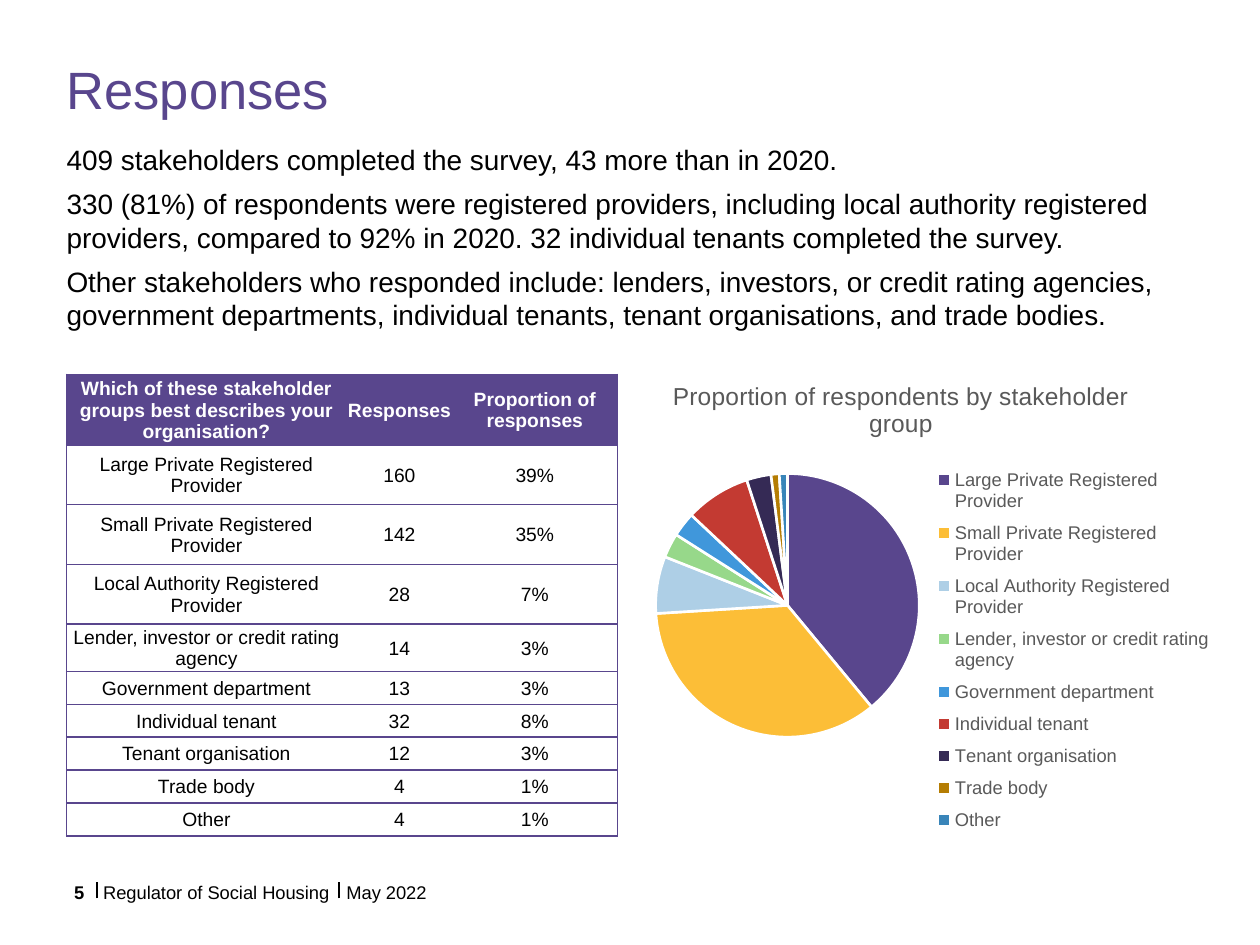
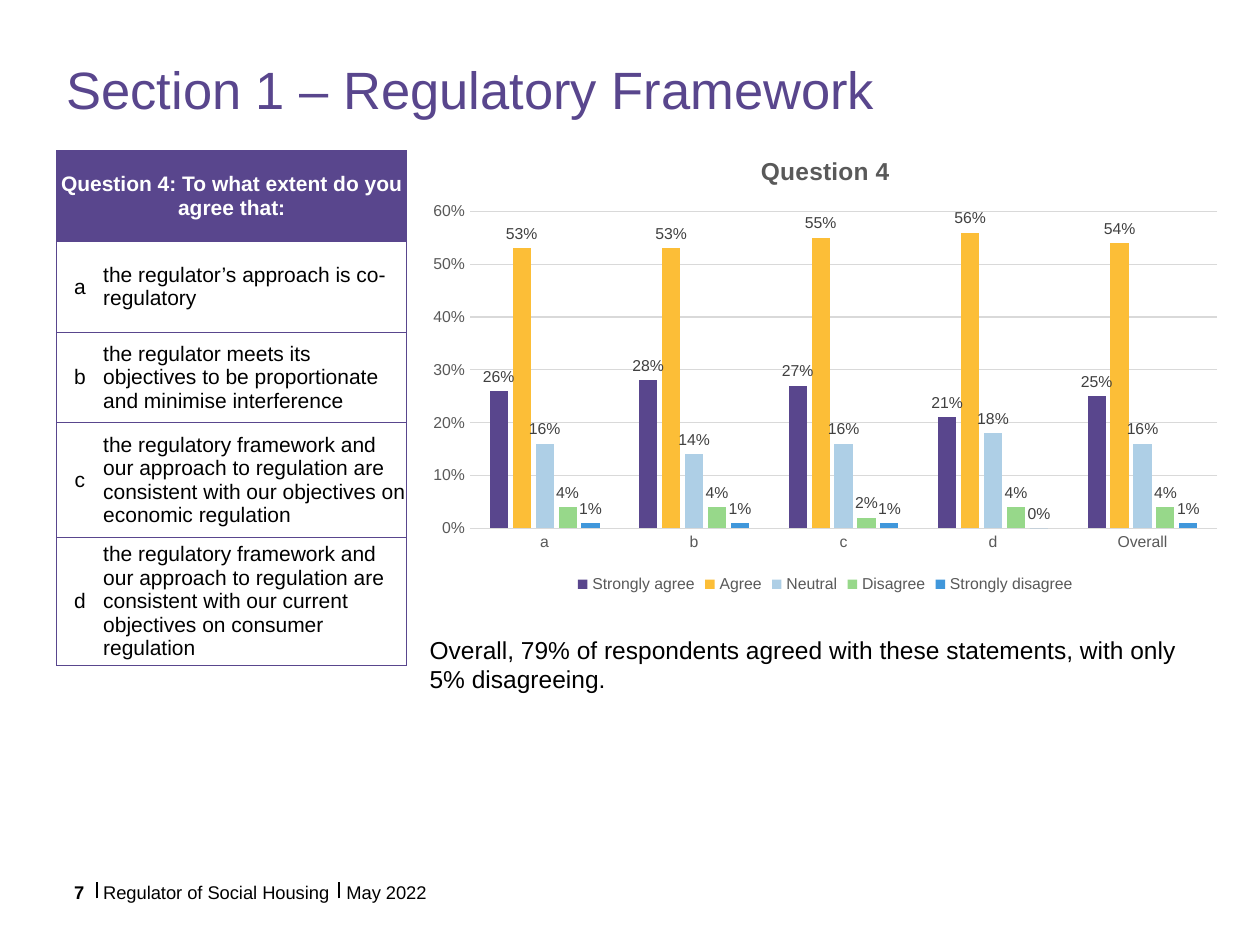
from dataclasses import dataclass

from lxml import etree
from pptx import Presentation
from pptx.chart.data import CategoryChartData
from pptx.dml.color import RGBColor
from pptx.enum import chart as ch, shapes, text
from pptx.oxml import ns
from pptx.util import Pt

LEFT, CENTER = text.PP_ALIGN.LEFT, text.PP_ALIGN.CENTER


@dataclass(frozen=True)
class Theme:
    font: str = "Arial"
    purple: str = "59468D"
    black: str = "000000"
    white: str = "FFFFFF"
    chart_text: str = "595959"
    label_text: str = "404040"
    grid: str = "D9D9D9"
    series: tuple[str, ...] = ("59468D", "FCBE37", "AECFE6", "97D88A", "4097DB",
                               "C33A32", "352A55", "B57D03", "3985B9")
    title_size: float = 30
    body_size: float = 16
    comment_size: float = 14
    chart_title_size: float = 14
    footer_size: float = 10.5
    pie_legend_size: float = 10.5
    axis_size: float = 9


@dataclass(frozen=True)
class Box:
    left: float
    top: float
    width: float
    height: float

    def lengths(self) -> tuple:
        return Pt(self.left), Pt(self.top), Pt(self.width), Pt(self.height)


@dataclass(frozen=True)
class TextStyle:
    size: float
    color: str = "000000"
    bold: bool = False
    align: text.PP_ALIGN = LEFT
    space_before: float = 0
    space_after: float = 0
    line_spacing: float = 1.0


@dataclass(frozen=True)
class GridTable:
    left: float
    top: float
    col_widths: tuple[float, ...]
    row_heights: tuple[float, ...]
    aligns: tuple[text.PP_ALIGN, ...]
    size: float
    border: float
    margin: float = 0
    gap: float = 0


THEME = Theme()
TITLE = Box(38, 36.7, 639, 57)
FOOTER_TOP, FOOTER_HEIGHT = 503.3, 8.6
FOOTER_RULES = (55.4, 193.7)


def rgb(color: str) -> RGBColor:
    return RGBColor.from_string(color)


def style_font(font, size: float, color: str, bold: bool = False) -> None:
    font.name, font.size, font.bold = THEME.font, Pt(size), bold
    font.color.rgb = rgb(color)


def fill_text(tf, paragraphs: list[str], style: TextStyle) -> None:
    tf.text = "\n".join(paragraphs)
    for p in tf.paragraphs:
        p.alignment = style.align
        p.line_spacing = style.line_spacing
        p.space_before, p.space_after = Pt(style.space_before), Pt(style.space_after)
        for r in p.runs:
            style_font(r.font, style.size, style.color, style.bold)


def add_text(s, box: Box, paragraphs: list[str], style: TextStyle) -> None:
    tf = s.shapes.add_textbox(*box.lengths()).text_frame
    tf.word_wrap = True
    tf.margin_left = tf.margin_top = tf.margin_right = tf.margin_bottom = 0
    fill_text(tf, paragraphs, style)


def add_rule(s, x: float) -> None:
    line = s.shapes.add_connector(shapes.MSO_CONNECTOR.STRAIGHT,
                                  Pt(x), Pt(513.4), Pt(x), Pt(504))
    line.line.color.rgb = rgb(THEME.black)
    line.line.width = Pt(0.75)
    etree.SubElement(line._element.spPr, ns.qn("a:effectLst"))


def add_page(prs, title: str, number: int):
    """Add a blank slide with the shared title and footer."""
    s = prs.slides.add_slide(prs.slide_layouts[6])
    add_text(s, TITLE, [title],
             TextStyle(THEME.title_size, THEME.purple, line_spacing=0.9))
    for x in FOOTER_RULES:
        add_rule(s, x)
    footer = TextStyle(THEME.footer_size)
    number_style = TextStyle(THEME.footer_size, bold=True, align=CENTER)
    for left, width, words, style in (
            (38, 14.4, str(number), number_style),
            (59, 131.8, "Regulator of Social Housing", footer),
            (198, 169, "May 2022", footer)):
        add_text(s, Box(left, FOOTER_TOP, width, FOOTER_HEIGHT), [words], style)
    return s


def set_borders(cell, width: float, left: bool, right: bool) -> None:
    """Draw top and bottom lines, and side lines only where asked."""
    tcPr = cell._tc.get_or_add_tcPr()
    sides = (("L", left), ("R", right), ("T", True), ("B", True))
    for i, (side, shown) in enumerate(sides):
        ln = etree.Element(ns.qn(f"a:ln{side}"), w=str(Pt(width)))
        if shown:
            fill = etree.SubElement(ln, ns.qn("a:solidFill"))
            etree.SubElement(fill, ns.qn("a:srgbClr"), val=THEME.purple)
        else:
            etree.SubElement(ln, ns.qn("a:noFill"))
        tcPr.insert(i, ln)


def add_grid_table(s, grid: GridTable, rows: list[tuple[str, ...]]) -> None:
    """Add a table with a purple header; a one-cell header spans all columns."""
    n_cols = len(grid.col_widths)
    box = Box(grid.left, grid.top, sum(grid.col_widths), sum(grid.row_heights))
    table = s.shapes.add_table(len(rows), n_cols, *box.lengths()).table
    table.horz_banding = False
    for column, width in zip(table.columns, grid.col_widths):
        column.width = Pt(width)
    for row, height in zip(table.rows, grid.row_heights):
        row.height = Pt(height)
    if len(rows[0]) == 1:
        table.cell(0, 0).merge(table.cell(0, n_cols - 1))
    header = TextStyle(grid.size, THEME.white, True, CENTER)
    for i, row in enumerate(rows):
        for j, words in enumerate(row):
            cell = table.cell(i, j)
            cell.vertical_anchor = text.MSO_ANCHOR.MIDDLE
            cell.margin_left = cell.margin_right = cell.margin_top = Pt(grid.margin)
            cell.margin_bottom = 0
            cell.fill.solid()
            cell.fill.fore_color.rgb = rgb(THEME.white if i else THEME.purple)
            body = TextStyle(grid.size, align=grid.aligns[j],
                             space_before=grid.gap, space_after=grid.gap)
            fill_text(cell.text_frame, [words], body if i else header)
            set_borders(cell, grid.border, j == 0, j + cell.span_width == n_cols)


def set_layout(parent, index: int, frame: tuple[float, ...], inner: bool = False) -> None:
    """Place a chart part by fractions of the chart: x, y, width, height."""
    for old in parent.findall(ns.qn("c:layout")):
        parent.remove(old)
    layout = etree.Element(ns.qn("c:layout"))
    manual = etree.SubElement(layout, ns.qn("c:manualLayout"))
    settings = [("layoutTarget", "inner")] if inner else []
    settings += [("xMode", "edge"), ("yMode", "edge")]
    settings += zip("xywh", map(str, frame))
    for tag, value in settings:
        etree.SubElement(manual, ns.qn(f"c:{tag}"), val=value)
    parent.insert(index, layout)


def add_chart(s, kind, box: Box, title: str, title_bold: bool, categories: list[str],
              series: dict[str, tuple], legend_at, legend_size: float):
    data = CategoryChartData()
    data.categories = categories
    for name, values in series.items():
        data.add_series(name, values)
    chart = s.shapes.add_chart(kind, *box.lengths(), data).chart
    style_font(chart.font, 10, THEME.black)
    chart.has_title = True
    fill_text(chart.chart_title.text_frame, [title],
              TextStyle(THEME.chart_title_size, THEME.chart_text, title_bold, CENTER))
    chart.chart_title.include_in_layout = False
    chart.has_legend = True
    chart.legend.position = legend_at
    chart.legend.include_in_layout = False
    style_font(chart.legend.font, legend_size, THEME.chart_text)
    return chart


def add_group_pie(s, box: Box, title: str, shares: dict[str, int]) -> None:
    chart = add_chart(s, ch.XL_CHART_TYPE.PIE, box, title, False, list(shares),
                      {"Series 1": tuple(shares.values())},
                      ch.XL_LEGEND_POSITION.RIGHT, THEME.pie_legend_size)
    plot = chart.plots[0]
    plot.vary_by_categories = True
    for i, color in enumerate(THEME.series):
        slice_format = plot.series[0].points[i].format
        slice_format.fill.solid()
        slice_format.fill.fore_color.rgb = rgb(color)
        slice_format.line.color.rgb = rgb(THEME.white)
        slice_format.line.width = Pt(1.5)
    plot_area = chart._chartSpace.chart.plotArea
    set_layout(plot_area, 0, (0.11, 0.23, 0.42, 0.53), inner=True)
    set_layout(chart.legend._element, 1, (0.55, 0.2, 0.45, 0.77))


def add_answer_columns(s, box: Box, title: str, categories: list[str],
                       answers: dict[str, tuple[float, ...]]) -> None:
    chart = add_chart(s, ch.XL_CHART_TYPE.COLUMN_CLUSTERED, box, title, True, categories,
                      answers, ch.XL_LEGEND_POSITION.BOTTOM, THEME.axis_size)
    plot = chart.plots[0]
    plot.vary_by_categories = False
    plot.gap_width, plot.overlap = 219, -27
    for bars, color in zip(plot.series, THEME.series):
        bars.format.fill.solid()
        bars.format.fill.fore_color.rgb = rgb(color)
        labels = bars.data_labels
        labels.show_value = True
        labels.number_format, labels.number_format_is_linked = "0%", False
        labels.position = ch.XL_LABEL_POSITION.OUTSIDE_END
        style_font(labels.font, THEME.axis_size, THEME.label_text)
    for axis in (chart.category_axis, chart.value_axis):
        axis.major_tick_mark = axis.minor_tick_mark = ch.XL_TICK_MARK.NONE
        style_font(axis.tick_labels.font, THEME.axis_size, THEME.chart_text)
    values = chart.value_axis
    values.minimum_scale, values.maximum_scale, values.major_unit = 0, 0.6, 0.1
    values.tick_labels.number_format = "0%"
    values.tick_labels.number_format_is_linked = False
    values.format.line.fill.background()
    for line in (chart.category_axis.format.line, values.major_gridlines.format.line):
        line.color.rgb = rgb(THEME.grid)
        line.width = Pt(0.75)


def build_responses(prs) -> None:
    s = add_page(prs, "Responses", 5)
    add_text(s, Box(38, 81.4, 639, 117.4), [
        "409 stakeholders completed the survey, 43 more than in 2020.",
        "330 (81%) of respondents were registered providers, including local authority "
        "registered providers, compared to 92% in 2020. 32 individual tenants completed "
        "the survey.",
        "Other stakeholders who responded include: lenders, investors, or credit rating "
        "agencies, government departments, individual tenants, tenant organisations, and "
        "trade bodies.",
    ], TextStyle(THEME.body_size, space_after=6))
    groups = [
        ("Large Private Registered Provider", 160, 39),
        ("Small Private Registered Provider", 142, 35),
        ("Local Authority Registered Provider", 28, 7),
        ("Lender, investor or credit rating agency", 14, 3),
        ("Government department", 13, 3),
        ("Individual tenant", 32, 8),
        ("Tenant organisation", 12, 3),
        ("Trade body", 4, 1),
        ("Other", 4, 1),
    ]
    header = ("Which of these stakeholder groups best describes your organisation?",
              "Responses", "Proportion of responses")
    grid = GridTable(38, 214, (160, 60.5, 94.3), (37.4, *[34.1] * 3, 25.2, *[18.8] * 5),
                     (CENTER,) * 3, size=11, border=1, margin=0.7)
    add_grid_table(s, grid, [header] + [(g, str(n), f"{share}%") for g, n, share in groups])
    add_group_pie(s, Box(334.8, 205.2, 360, 284.4),
                  "Proportion of respondents by stakeholder group",
                  {g: share for g, _, share in groups})


def build_framework(prs) -> None:
    s = add_page(prs, "Section 1 – Regulatory Framework", 7)
    grid = GridTable(32.4, 86.2, (26.6, 173.5), (51.8, 51.8, 51.8, 65.5, 73.4),
                     (CENTER, LEFT), size=12, border=0.5, gap=2)
    framework = "the regulatory framework and our approach to regulation are consistent with our "
    add_grid_table(s, grid, [
        ("Question 4: To what extent do you agree that:",),
        ("a", "the regulator’s approach is co-regulatory"),
        ("b", "the regulator meets its objectives to be proportionate and minimise interference"),
        ("c", framework + "objectives on economic regulation"),
        ("d", framework + "current objectives on consumer regulation"),
    ])
    add_answer_columns(s, Box(238.3, 77, 466.6, 265), "Question 4",
                       ["a", "b", "c", "d", "Overall"], {
        "Strongly agree": (0.26, 0.28, 0.27, 0.21, 0.25),
        "Agree": (0.53, 0.53, 0.55, 0.56, 0.54),
        "Neutral": (0.16, 0.14, 0.16, 0.18, 0.16),
        "Disagree": (0.04, 0.04, 0.02, 0.04, 0.04),
        "Strongly disagree": (0.01, 0.01, 0.01, 0, 0.01),
    })
    add_text(s, Box(245.5, 362.9, 435, 34),
             ["Overall, 79% of respondents agreed with these statements, "
              "with only 5% disagreeing."], TextStyle(THEME.comment_size))


def main() -> None:
    prs = Presentation()
    prs.slide_width, prs.slide_height = Pt(720), Pt(540)
    build_responses(prs)
    build_framework(prs)
    prs.save("out.pptx")


if __name__ == "__main__":
    main()
